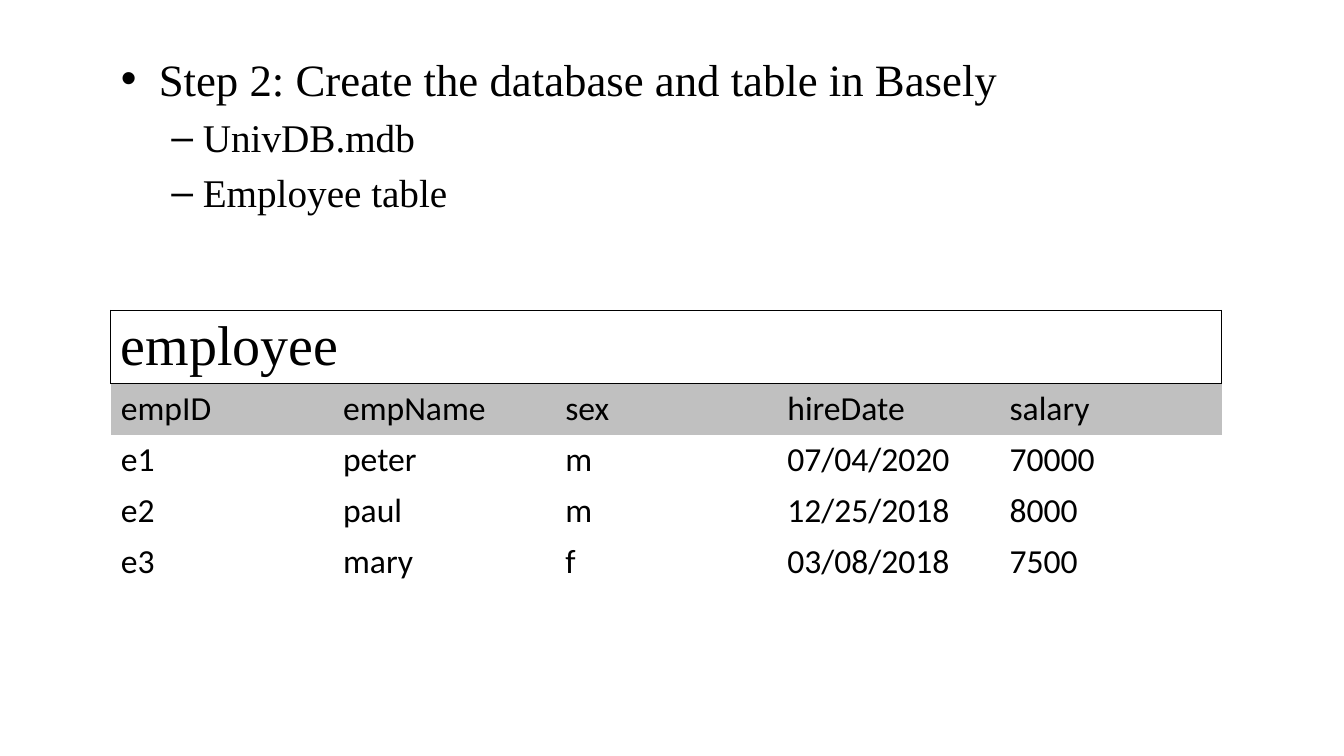
from lxml import etree
from pptx import Presentation
from pptx.dml.color import RGBColor
from pptx.enum.text import MSO_ANCHOR, MSO_AUTO_SIZE
from pptx.oxml.ns import qn
from pptx.util import Pt

MIDDLE = MSO_ANCHOR.MIDDLE
TOP = MSO_ANCHOR.TOP
NO_AUTOFIT = MSO_AUTO_SIZE.NONE
TITLE_AND_CONTENT = 1
NO_STYLE_NO_GRID = "{2D5ABB26-0587-4C30-8999-92F81FD0307C}"

COLORS = {"text": "000000", "border": "000000", "header": "C0C0C0", "cell": "FFFFFF"}
SERIF = "Times New Roman"
SANS = "Calibri"

STEPS = [
    (0, "Step 2: Create the database and table in Basely"),
    (1, "UnivDB.mdb"),
    (1, "Employee table"),
]
LEVELS = [
    {"size": 32, "margin": 27, "indent": -27, "bullet": "•"},
    {"size": 28, "margin": 58.5, "indent": -22.5, "bullet": "–"},
]
EMPLOYEES = [
    ["empID", "empName", "sex", "hireDate", "salary"],
    ["e1", "peter", "m", "07/04/2020", "70000"],
    ["e2", "paul", "m", "12/25/2018", "8000"],
    ["e3", "mary", "f", "03/08/2018", "7500"],
]
COLUMN_WIDTH = 158.7
TITLE_HEIGHT = 52
ROW_HEIGHT = 36.6


def format_runs(paragraph, font_name, size):
    for run in paragraph.runs:
        run.font.name = font_name
        run.font.size = Pt(size)
        run.font.color.rgb = RGBColor.from_string(COLORS["text"])


def set_bullet(paragraph, level):
    properties = paragraph._p.get_or_add_pPr()
    properties.set("marL", str(Pt(level["margin"])))
    properties.set("indent", str(Pt(level["indent"])))
    spacing = etree.SubElement(properties, qn("a:spcBef"))
    etree.SubElement(spacing, qn("a:spcPct"), val="20000")
    etree.SubElement(properties, qn("a:buFont"), typeface="Arial")
    etree.SubElement(properties, qn("a:buChar"), char=level["bullet"])


def fill_body(body):
    body.left, body.top, body.width, body.height = Pt(79.2), Pt(33.1), Pt(815.8), Pt(324)
    frame = body.text_frame
    frame.auto_size = NO_AUTOFIT
    frame.vertical_anchor = TOP
    frame.text = "\n".join(text for _, text in STEPS)
    for paragraph, (depth, _) in zip(frame.paragraphs, STEPS):
        paragraph.level = depth
        set_bullet(paragraph, LEVELS[depth])
        format_runs(paragraph, SERIF, LEVELS[depth]["size"])


def add_borders(cell, sides):
    properties = cell._tc.get_or_add_tcPr()
    for side in sides:
        line = etree.SubElement(properties, qn(f"a:ln{side}"), w=str(Pt(1)))
        fill = etree.SubElement(line, qn("a:solidFill"))
        etree.SubElement(fill, qn("a:srgbClr"), val=COLORS["border"])


def write_cell(cell, text, font_name, size, color, anchor):
    cell.text = text
    cell.vertical_anchor = anchor
    cell.fill.solid()
    cell.fill.fore_color.rgb = RGBColor.from_string(COLORS[color])
    format_runs(cell.text_frame.paragraphs[0], font_name, size)


def add_employee_table(slide):
    row_count, column_count = len(EMPLOYEES) + 1, len(EMPLOYEES[0])
    frame = slide.shapes.add_table(
        row_count, column_count, Pt(79.2), Pt(221.8),
        Pt(COLUMN_WIDTH * column_count), Pt(TITLE_HEIGHT + ROW_HEIGHT * len(EMPLOYEES)))
    table = frame.table
    table.first_row = table.horz_banding = False
    table._tbl.tblPr.find(qn("a:tableStyleId")).text = NO_STYLE_NO_GRID
    for column in table.columns:
        column.width = Pt(COLUMN_WIDTH)
    for index, row in enumerate(table.rows):
        row.height = Pt(ROW_HEIGHT if index else TITLE_HEIGHT)

    title = table.cell(0, 0)
    title.merge(table.cell(0, column_count - 1))
    add_borders(title, "LRTB")
    for column in range(1, column_count):
        add_borders(table.cell(0, column), "RT" if column == column_count - 1 else "T")
    write_cell(title, "employee", SERIF, 40, "cell", MIDDLE)

    for row, values in enumerate(EMPLOYEES, start=1):
        color, anchor = ("header", MIDDLE) if row == 1 else ("cell", TOP)
        for column, value in enumerate(values):
            write_cell(table.cell(row, column), value, SANS, 24, color, anchor)


def main():
    presentation = Presentation()
    presentation.slide_width, presentation.slide_height = Pt(960), Pt(540)
    slide = presentation.slides.add_slide(presentation.slide_layouts[TITLE_AND_CONTENT])
    title = slide.shapes.title
    title.element.getparent().remove(title.element)
    fill_body(slide.placeholders[1])
    add_employee_table(slide)
    presentation.save("out.pptx")


if __name__ == "__main__":
    main()
